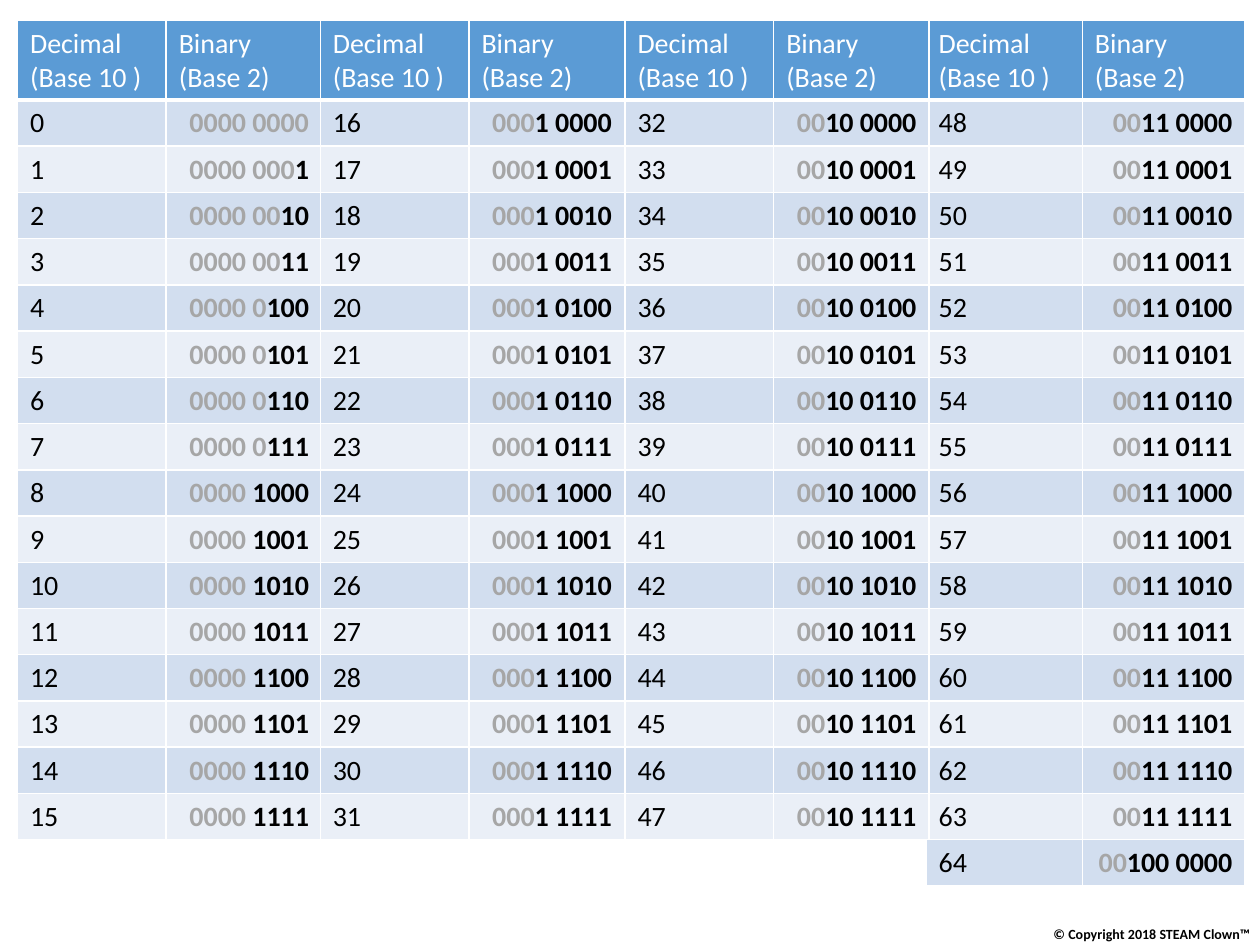
from lxml import etree
from pptx import Presentation
from pptx import util as u
from pptx.dml.color import RGBColor
from pptx.enum import text
from pptx.oxml import ns

Pt = u.Pt
FONT = "Calibri"
WHITE, BLACK, GREY = "FFFFFF", "000000", "A6A6A6"
HEADER_FILL = "5B9BD5"
BAND_FILLS = ["D2DEEF", "EAEFF7"]
HEADINGS = ["Decimal (Base 10 )", "Binary (Base 2)"]
TABLE_TOP, HEADER_HEIGHT, ROW_HEIGHT = 11.5, 45.6, 26.4


def rgb(value):
    return RGBColor.from_string(value)


def style_font(font, color, bold=False, size=16):
    font.name = FONT
    font.size = Pt(size)
    font.bold = bold
    font.color.rgb = rgb(color)


def add_borders(cell, bottom=1):
    properties = cell._tc.get_or_add_tcPr()
    for side, width in zip("LRTB", (1, 1, 1, bottom)):
        line = etree.SubElement(properties, ns.qn(f"a:ln{side}"), w=str(Pt(width)))
        fill = etree.SubElement(line, ns.qn("a:solidFill"))
        etree.SubElement(fill, ns.qn("a:srgbClr"), val=WHITE)


def format_cell(cell, fill, bottom=1):
    add_borders(cell, bottom)
    cell.fill.solid()
    cell.fill.fore_color.rgb = rgb(fill)


def split_binary(number):
    """Return the leading zeros and the significant digits, with a gap before the last four."""
    bits = number.bit_length()
    width = max(8, bits + 2)
    digits = f"{number:0{width}b}"
    grouped = f"{digits[:-4]} {digits[-4:]}"
    zeros = width - bits
    cut = zeros + (zeros >= width - 4)
    return grouped[:cut], grouped[cut:]


def write_binary(cell, number):
    para = cell.text_frame.paragraphs[0]
    para.alignment = text.PP_ALIGN.RIGHT
    para.font.name = FONT
    para.font.size = Pt(16)
    for digits, color in zip(split_binary(number), (GREY, BLACK)):
        if digits:
            span = para.add_run()
            span.text = digits
            style_font(span.font, color, bold=True)


def write_plain(cell, words, color):
    cell.text = words
    style_font(cell.text_frame.paragraphs[0].font, color)


def add_number_table(page, left, widths, numbers):
    height = HEADER_HEIGHT + ROW_HEIGHT * len(numbers)
    table = page.shapes.add_table(
        len(numbers) + 1, 2, Pt(left), Pt(TABLE_TOP), Pt(sum(widths)), Pt(height)
    ).table
    for column, width in zip(table.columns, widths):
        column.width = Pt(width)
    table.rows[0].height = Pt(HEADER_HEIGHT)
    for column, heading in enumerate(HEADINGS):
        cell = table.cell(0, column)
        format_cell(cell, HEADER_FILL, bottom=3)
        write_plain(cell, heading, WHITE)
    for row, number in enumerate(numbers, start=1):
        table.rows[row].height = Pt(ROW_HEIGHT)
        decimal, binary = table.cell(row, 0), table.cell(row, 1)
        for cell in (decimal, binary):
            format_cell(cell, BAND_FILLS[(row - 1) % 2])
        write_plain(decimal, str(number), BLACK)
        write_binary(binary, number)


def add_copyright(page):
    box = page.shapes.add_textbox(Pt(602), Pt(524.2), Pt(126.7), Pt(15.1))
    frame = box.text_frame
    frame.word_wrap = True
    frame.margin_left = 0
    frame.margin_right = Pt(7.2)
    frame.margin_top = frame.margin_bottom = Pt(3.6)
    para = frame.paragraphs[0]
    para.text = "© Copyright 2018 STEAM Clown™"
    para.line_spacing = 1.1
    style_font(para.font, BLACK, bold=True, size=8)


def main():
    deck = Presentation()
    deck.slide_width, deck.slide_height = Pt(720), Pt(540)
    page = deck.slides.add_slide(deck.slide_layouts[6])
    add_copyright(page)
    narrow, wide = (85, 88.8), (89.3, 92.9)
    add_number_table(page, 10, narrow, range(16))
    add_number_table(page, 529.2, wide, range(48, 65))
    add_number_table(page, 357.1, narrow, range(32, 48))
    add_number_table(page, 183, narrow, range(16, 32))
    deck.save("out.pptx")


if __name__ == "__main__":
    main()
